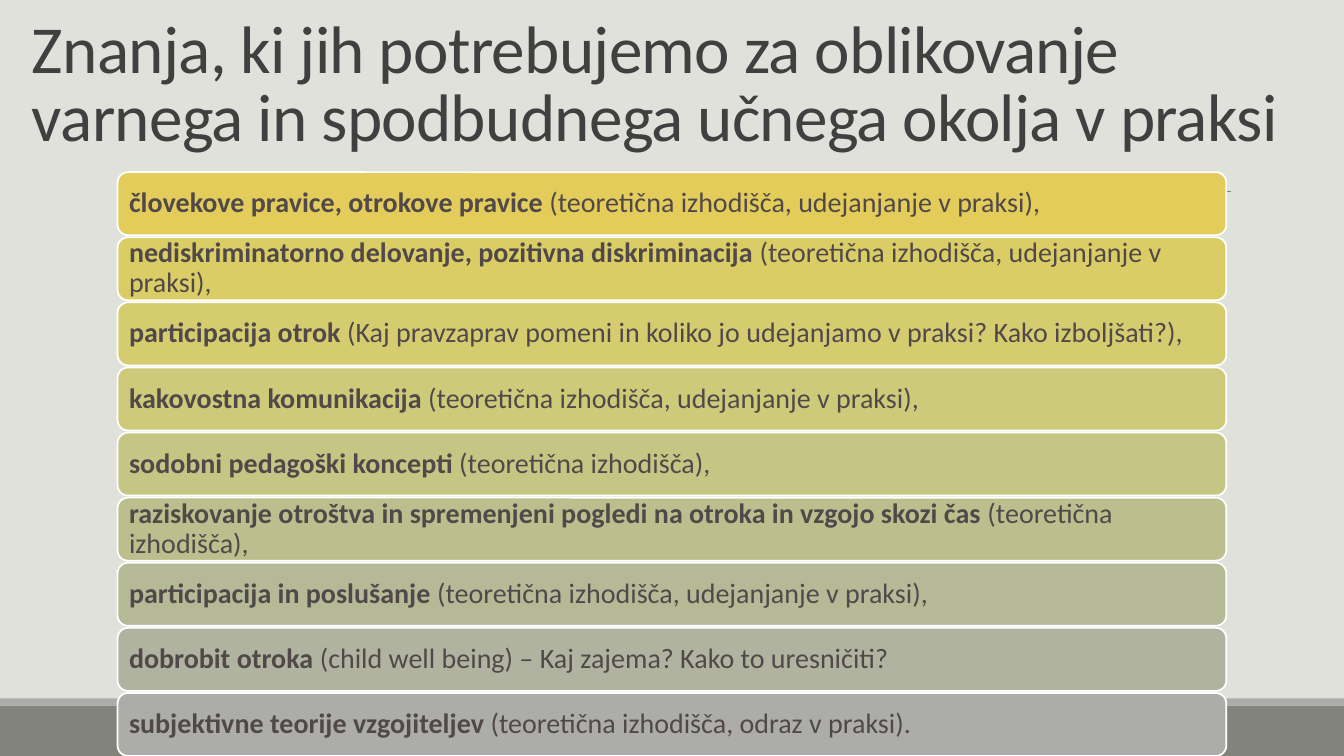
"""Build a slide listing the knowledge needed for a safe learning environment."""
from lxml import etree
from pptx import Presentation
from pptx.dml.color import RGBColor
from pptx.enum.shapes import MSO_CONNECTOR, MSO_SHAPE
from pptx.enum.text import MSO_ANCHOR, PP_ALIGN
from pptx.oxml.ns import qn
from pptx.util import Pt

PX = 9525
RECT = MSO_SHAPE.RECTANGLE
ROUND = MSO_SHAPE.ROUNDED_RECTANGLE
LINE = MSO_CONNECTOR.STRAIGHT
LEFT = PP_ALIGN.LEFT
MIDDLE = MSO_ANCHOR.MIDDLE
BOTTOM = MSO_ANCHOR.BOTTOM

TITLE = "Znanja, ki jih potrebujemo za oblikovanje varnega in spodbudnega učnega okolja v praksi"
TOPICS = [
    ("E3CC5A", "človekove pravice, otrokove pravice ",
     "(teoretična izhodišča, udejanjanje v praksi),"),
    ("DBCD65", "nediskriminatorno delovanje, pozitivna diskriminacija ",
     "(teoretična izhodišča, udejanjanje v praksi),"),
    ("D4CC6F", "participacija otrok ",
     "(Kaj pravzaprav pomeni in koliko jo udejanjamo v praksi? Kako izboljšati?),"),
    ("CDCA79", "kakovostna komunikacija ",
     "(teoretična izhodišča, udejanjanje v praksi),"),
    ("C5C683", "sodobni pedagoški koncepti ", "(teoretična izhodišča),"),
    ("BCBF8D", "raziskovanje otroštva in spremenjeni pogledi na otroka in vzgojo skozi čas ",
     "(teoretična izhodišča),"),
    ("B5B996", "participacija in poslušanje ",
     "(teoretična izhodišča, udejanjanje v praksi),"),
    ("B0B39F", "dobrobit otroka ",
     "(child well being) – Kaj zajema? Kako to uresničiti?"),
    ("ACADA8", "subjektivne teorije vzgojiteljev ",
     "(teoretična izhodišča, odraz v praksi)."),
]


def color(code):
    return RGBColor.from_string(code)


def block(kind, x, y, w, h, fill):
    shape = slide.shapes.add_shape(kind, x * PX, y * PX, w * PX, h * PX)
    shape.shadow.inherit = False
    shape.fill.solid()
    shape.fill.fore_color.rgb = color(fill)
    shape.line.fill.background()
    return shape


deck = Presentation()
deck.slide_width = 1280 * PX
deck.slide_height = 720 * PX
slide = deck.slides.add_slide(deck.slide_layouts[6])
slide.background.fill.solid()
slide.background.fill.fore_color.rgb = color("E1E1DB")

block(RECT, 0, 672, 1280, 48, "82847C")
block(RECT, 0, 665, 1280, 7, "ACADA8")
rule = slide.shapes.add_connector(LINE, 126 * PX, 182 * PX, 1172 * PX, 182 * PX)
rule.line.color.rgb = color("808080")
rule.line.width = Pt(0.5)
etree.SubElement(rule.element.spPr, qn("a:effectLst"))

head = slide.shapes.add_textbox(21 * PX, 0, 1216 * PX, 153 * PX).text_frame
head.word_wrap = True
head.vertical_anchor = BOTTOM
para = head.paragraphs[0]
para.line_spacing = 0.85
para.font.name = "Calibri"
para.font.size = Pt(48)
para.font.color.rgb = color("404040")
run = para.add_run()
run.text = TITLE
run.font._element.set("spc", "-50")

for row, (fill, topic, detail) in enumerate(TOPICS):
    bar = block(ROUND, 112, 164 + 62 * row, 1056, 60, fill)
    bar.line.color.rgb = color("FFFFFF")
    bar.line.width = Pt(1.25)
    frame = bar.text_frame
    frame.word_wrap = True
    frame.vertical_anchor = MIDDLE
    frame.margin_left = frame.margin_right = 8 * PX
    frame.margin_top = frame.margin_bottom = 8 * PX
    para = frame.paragraphs[0]
    para.alignment = LEFT
    para.line_spacing = 0.9
    para.font.name = "Calibri"
    para.font.size = Pt(20)
    para.font.color.rgb = color("514949")
    for text, bold in ((topic, True), (detail, False)):
        run = para.add_run()
        run.text = text
        run.font.bold = bold

deck.save("out.pptx")
